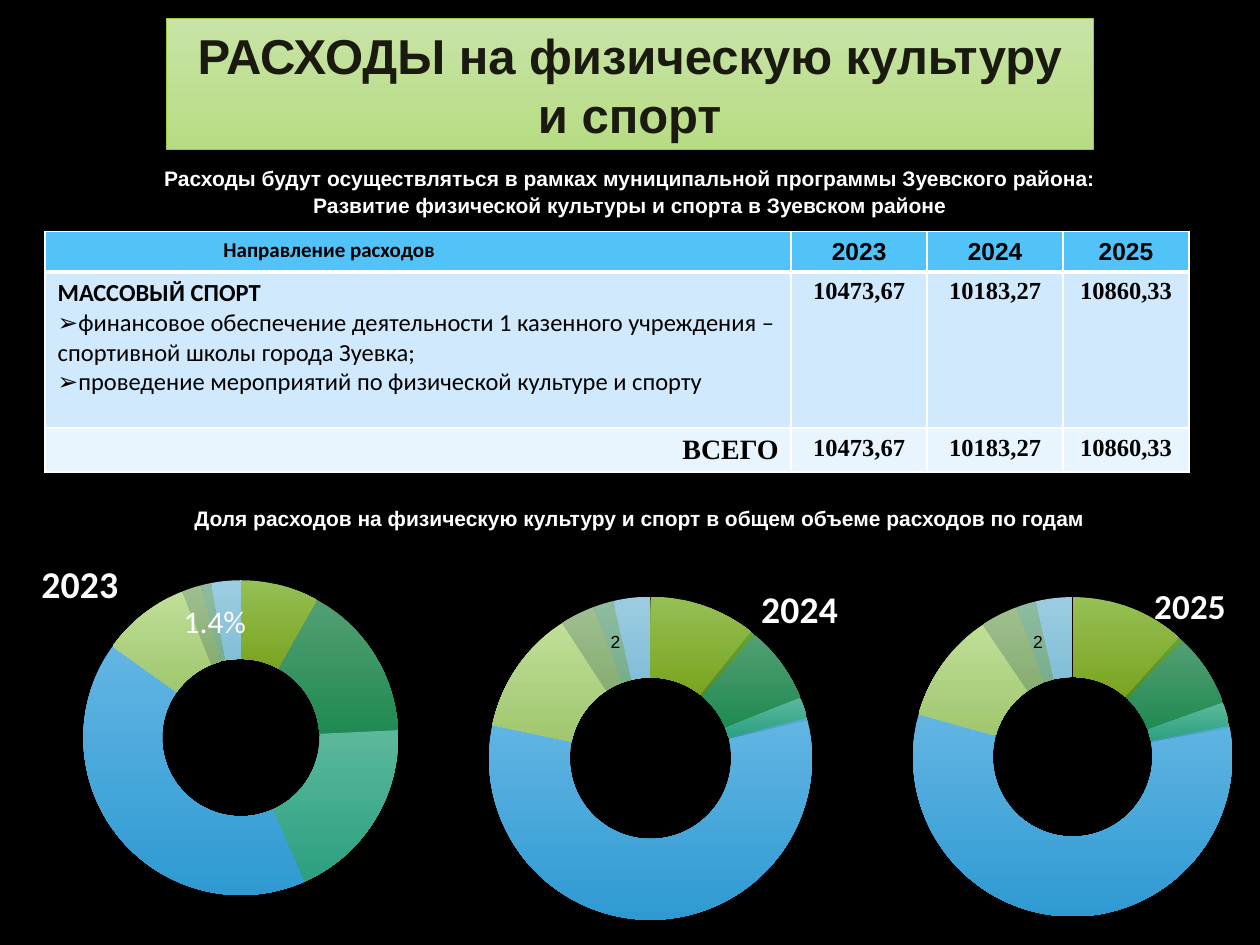
from dataclasses import dataclass

from lxml.etree import SubElement
from pptx import Presentation
from pptx.chart.data import CategoryChartData
from pptx.chart.point import Point
from pptx.dml.color import RGBColor
from pptx.enum.chart import XL_CHART_TYPE
from pptx.enum.shapes import MSO_SHAPE
from pptx.enum.text import MSO_ANCHOR, PP_ALIGN
from pptx.oxml import parse_xml
from pptx.oxml.ns import nsdecls, qn
from pptx.util import Cm, Pt

WHITE = RGBColor(0xFF, 0xFF, 0xFF)
BLACK = RGBColor(0x00, 0x00, 0x00)
INK = RGBColor(0x1B, 0x1A, 0x10)
LEAF = RGBColor(0x99, 0xCB, 0x38)
LEAF_LIGHT = RGBColor(0xC8, 0xE3, 0xA5)
LEAF_SOFT = RGBColor(0xB7, 0xDD, 0x84)
HEADER_BLUE = RGBColor(0x51, 0xC3, 0xF9)
BODY_BLUE = RGBColor(0xD0, 0xE9, 0xFD)
TOTAL_BLUE = RGBColor(0xE9, 0xF5, 0xFE)
SLICE_TOPS = tuple(map(RGBColor.from_string, (
    "95C055", "63A537", "539F74", "5CB89D", "4EB3CF", "62B5E3",
    "C0DF98", "A0BE90", "8FBCA0", "6FC9B2", "9CCCE1")))
SLICE_BOTTOMS = tuple(map(RGBColor.from_string, (
    "7AA41F", "4F8A28", "208A52", "2BA080", "3E95AE", "2F9AD2",
    "A0C76F", "86AE72", "77AE8C", "5AB8A0", "82BFD8")))
SPORT_SLICE = 8
YEARS = ("2023", "2024", "2025")
AMOUNTS = ("10473,67", "10183,27", "10860,33")


@dataclass(frozen=True)
class Style:
    size: float
    font: str
    color: RGBColor = BLACK
    bold: bool = True


@dataclass(frozen=True)
class Ring:
    year: str
    frame: tuple
    size: float
    title_size: float
    title_spot: tuple
    plot: tuple
    shares: tuple
    label: str = ""


AMOUNT = Style(14, "Times New Roman")
RINGS = (
    Ring("2023", (0.43, 10.69, 8.94, 8.2), 18, 21.6, (0.03, 0.05), (0.14, 0.09, 0.71, 0.84),
         (8, 0, 16, 19, 0, 41, 9, 2, 1, 0, 3), "1.4%"),
    Ring("2024", (8.48, 11.1, 9.09, 8.46), 17.9, 21.5, (0.74, 0.06), (0.15, 0.11, 0.72, 0.77),
         (10.7, 0.5, 7.7, 2.1, 0.2, 57.1, 12.5, 3.5, 2, 0, 3.7)),
    Ring("2025", (16.51, 10.44, 9.47, 8.84), 17.9, 20, (0.7, 0.13), (0.2, 0.17, 0.68, 0.75),
         (11.6, 0.5, 7.4, 2.4, 0.2, 57.2, 11.2, 3.8, 2, 0, 3.7)),
)


def set_font(font, style: Style) -> None:
    font.size, font.name, font.bold = Pt(style.size), style.font, style.bold
    font.color.rgb = style.color


def add_span(para, text: str, style: Style) -> None:
    span = para.add_run()
    span.text = text
    set_font(span.font, style)


def write_lines(frame, style: Style, *lines: str, align=PP_ALIGN.CENTER) -> None:
    for index, line in enumerate(lines):
        para = frame.add_paragraph() if index else frame.paragraphs[0]
        para.alignment = align
        add_span(para, line, style)


def fill_gradient(fill, *colors: RGBColor) -> None:
    fill.gradient()
    fill.gradient_angle = 270
    for stop, color in zip(fill.gradient_stops, colors):
        stop.color.rgb = color


def add_caption(page, frame: tuple, top_margin: float, *lines: str) -> None:
    box = page.shapes.add_textbox(*map(Cm, frame))
    box.text_frame.word_wrap = True
    box.text_frame.margin_top = Cm(top_margin)
    write_lines(box.text_frame, Style(12, "Arial", WHITE), *lines)
    for para in box.text_frame.paragraphs[1:]:
        para.space_before = Pt(1)


def add_heading(page) -> None:
    box = page.shapes.add_shape(MSO_SHAPE.RECTANGLE, *map(Cm, (3.35, 0.38, 18.69, 2.64)))
    box.shadow.inherit = False
    fill_gradient(box.fill, LEAF_LIGHT, LEAF_SOFT)
    box.line.color.rgb, box.line.width = LEAF, Pt(0.5)
    box.text_frame.word_wrap = True
    box.text_frame.vertical_anchor = MSO_ANCHOR.MIDDLE
    write_lines(box.text_frame, Style(28, "Arial", INK), "РАСХОДЫ на физическую культуру", "и спорт")


def paint_cell(cell, color: RGBColor, bottom_width: float) -> None:
    for side in "LRTB":
        edge = SubElement(cell._tc.get_or_add_tcPr(), qn(f"a:ln{side}"))
        edge.set("w", str(Pt(bottom_width if side == "B" else 1)))
        SubElement(SubElement(edge, qn("a:solidFill")), qn("a:srgbClr")).set("val", str(WHITE))
    cell.fill.solid()
    cell.fill.fore_color.rgb = color


def add_bullet(frame, text: str) -> None:
    para = frame.add_paragraph()
    props = para._p.get_or_add_pPr()
    SubElement(props, qn("a:buFont")).set("typeface", "Arial")
    SubElement(props, qn("a:buChar")).set("char", "➢")
    add_span(para, text, Style(14, "Calibri", bold=False))


def add_spending_table(page) -> None:
    table = page.shapes.add_table(3, 4, *map(Cm, (0.91, 4.67, 23.06, 4.84))).table
    for column, width in zip(table.columns, (15.04, 2.74, 2.74, 2.54)):
        column.width = Cm(width)
    looks = ((0.81, HEADER_BLUE, 3), (3.15, BODY_BLUE, 1), (0.88, TOTAL_BLUE, 1))
    for row, (height, color, edge) in zip(table.rows, looks):
        row.height = Cm(height)
        for cell in row.cells:
            paint_cell(cell, color, edge)
    header, sport, total = (table.cell(row, 0) for row in range(3))
    header.margin_right = Cm(3.84)
    write_lines(header.text_frame, Style(12, "Calibri"), "Направление расходов")
    write_lines(sport.text_frame, Style(14, "Calibri"), "МАССОВЫЙ СПОРТ", align=PP_ALIGN.LEFT)
    add_bullet(sport.text_frame, "финансовое обеспечение деятельности 1 казенного учреждения – "
               "спортивной школы города Зуевка;")
    add_bullet(sport.text_frame, "проведение мероприятий по физической культуре и спорту")
    write_lines(total.text_frame, Style(16, "Times New Roman"), "ВСЕГО", align=PP_ALIGN.RIGHT)
    figures = ((YEARS, Style(14, "Arial")), (AMOUNTS, AMOUNT), (AMOUNTS, AMOUNT))
    for row, (texts, style) in enumerate(figures):
        for column, text in enumerate(texts, 1):
            write_lines(table.cell(row, column).text_frame, style, text)


def place(parent, index: int, spot: tuple, target: str = "") -> None:
    for old in parent.findall(qn("c:layout")):
        parent.remove(old)
    sizes = "".join(f'<c:{key} val="{value}"/>' for key, value in zip("xywh", spot))
    parent.insert(index, parse_xml(
        f'<c:layout {nsdecls("c")}><c:manualLayout>{target}<c:xMode val="edge"/>'
        f'<c:yMode val="edge"/>{sizes}</c:manualLayout></c:layout>'))


def add_ring(page, ring: Ring) -> None:
    data = CategoryChartData()
    data.categories = ("1", "2", "3", "4")
    data.add_series(ring.year, ring.shares)
    chart = page.shapes.add_chart(XL_CHART_TYPE.DOUGHNUT, *map(Cm, ring.frame), data).chart
    chart.has_legend = False
    set_font(chart.font, Style(ring.size, "Calibri", WHITE, False))
    write_lines(chart.chart_title.text_frame, Style(ring.title_size, "Calibri", WHITE), ring.year)
    place(chart.element.xpath("c:chart/c:title")[0], 1, ring.title_spot)
    place(chart.element.xpath("c:chart/c:plotArea")[0], 0, ring.plot, '<c:layoutTarget val="inner"/>')
    chart.plots[0].vary_by_categories = True
    series = chart.plots[0].series[0]
    series.data_labels.show_value = False
    points = [Point(series._element, index) for index in range(len(ring.shares))]
    for point, top, bottom in zip(points, SLICE_TOPS, SLICE_BOTTOMS):
        fill_gradient(point.format.fill, top, bottom)
        point.format.line.fill.background()
    label = points[SPORT_SLICE].data_label
    if ring.label:
        write_lines(label.text_frame, Style(18, "Calibri", WHITE, False), ring.label)
    else:
        set_font(label.font, Style(10, "Arial", bold=False))


def main() -> None:
    """Build the slide on spending for physical culture and sport."""
    deck = Presentation()
    deck.slide_width, deck.slide_height = Cm(25.4), Cm(19.05)
    page = deck.slides.add_slide(deck.slide_layouts[6])
    page.background.fill.solid()
    page.background.fill.fore_color.rgb = BLACK
    add_spending_table(page)
    for ring in RINGS:
        add_ring(page, ring)
    add_caption(page, (1.78, 10.06, 22.23, 0.76), 0.13,
                "Доля расходов на физическую культуру и спорт в общем объеме расходов по годам")
    add_heading(page)
    add_caption(page, (2.64, 2.16, 20.12, 2.82), 1.17,
                "Расходы будут осуществляться в рамках муниципальной программы Зуевского района:",
                "Развитие физической культуры и спорта в Зуевском районе")
    deck.save("out.pptx")


if __name__ == "__main__":
    main()
